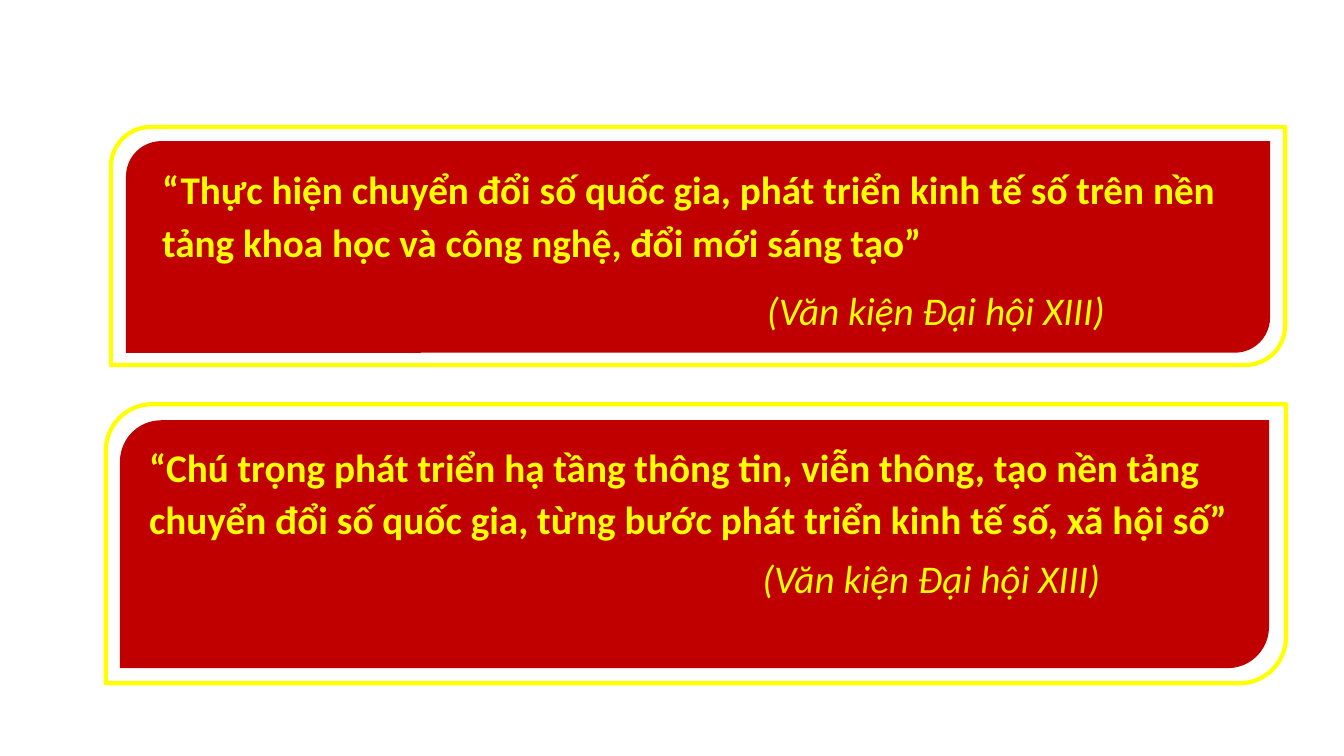
"""Build a slide with two framed quotations on digital transformation."""
import pptx
import pptx.util
import pptx.dml.color
import pptx.enum.shapes
import pptx.enum.text

COLOURS = {"yellow": "FFFF00", "red": "C00000"}


class QuotePage:
    """Hold the text style and the current slide."""

    font_name = "Calibri"
    font_size = 28
    frame_width = 3

    def __init__(self, page):
        self.page = page

    def colour(self, name):
        return pptx.dml.color.RGBColor.from_string(COLOURS[name])

    def plate(self, group, place, fill=None, line=None):
        shape = group.shapes.add_shape(
            pptx.enum.shapes.MSO_SHAPE.ROUND_2_DIAG_RECTANGLE,
            *map(pptx.util.Pt, place))
        shape.shadow.inherit = False
        if fill:
            shape.fill.solid()
            shape.fill.fore_color.rgb = self.colour(fill)
        else:
            shape.fill.background()
        if line:
            shape.line.color.rgb = self.colour(line)
            shape.line.width = pptx.util.Pt(self.frame_width)
        else:
            shape.line.fill.background()

    def framed_plate(self, frame, panel):
        group = self.page.shapes.add_group_shape()
        self.plate(group, frame, line="yellow")
        self.plate(group, panel, fill="red")

    def style_text(self, para, text, bold=False, italic=False):
        para.text = text
        for span in para.runs:
            span.font.name = self.font_name
            span.font.size = pptx.util.Pt(self.font_size)
            span.font.bold = bold
            span.font.italic = italic
            span.font.color.rgb = self.colour("yellow")

    def quotation(self, place, quote, source, leading, after, gap, indent):
        box = self.page.shapes.add_textbox(*map(pptx.util.Pt, place))
        frame = box.text_frame
        frame.word_wrap = True
        frame.auto_size = pptx.enum.text.MSO_AUTO_SIZE.SHAPE_TO_FIT_TEXT
        para = frame.paragraphs[0]
        self.style_text(para, quote, bold=True)
        para.line_spacing = pptx.util.Pt(leading)
        para.space_after = pptx.util.Pt(after)
        para = frame.add_paragraph()
        self.style_text(para, source, italic=True)
        para.space_before = para.space_after = pptx.util.Pt(gap)
        properties = para._p.get_or_add_pPr()
        properties.set("marL", str(pptx.util.Pt(indent)))
        properties.set("indent", "0")


def main():
    deck = pptx.Presentation()
    deck.slide_width = pptx.util.Pt(960)
    deck.slide_height = pptx.util.Pt(540)
    page = QuotePage(deck.slides.add_slide(deck.slide_layouts[6]))
    source = "(Văn kiện Đại hội XIII)"

    page.framed_plate((79.2, 90.7, 838.8, 170), (90, 100.8, 817.2, 151.2))
    page.quotation(
        (108.7, 110.2, 810, 133.2),
        "“Thực hiện chuyển đổi số quốc gia, phát triển kinh tế số trên nền "
        "tảng khoa học và công nghệ, đổi mới sáng tạo”",
        source, leading=38, after=12, gap=3, indent=432)

    page.framed_plate((75.6, 288.7, 843, 199.4), (85.7, 300.2, 820.8, 177.1))
    page.quotation(
        (99.4, 309.6, 784.8, 162.7),
        "“Chú trọng phát triển hạ tầng thông tin, viễn thông, tạo nền tảng "
        "chuyển đổi số quốc gia, từng bước phát triển kinh tế số, xã hội số”",
        source, leading=37, after=0, gap=9, indent=438)

    deck.save("out.pptx")


if __name__ == "__main__":
    main()
